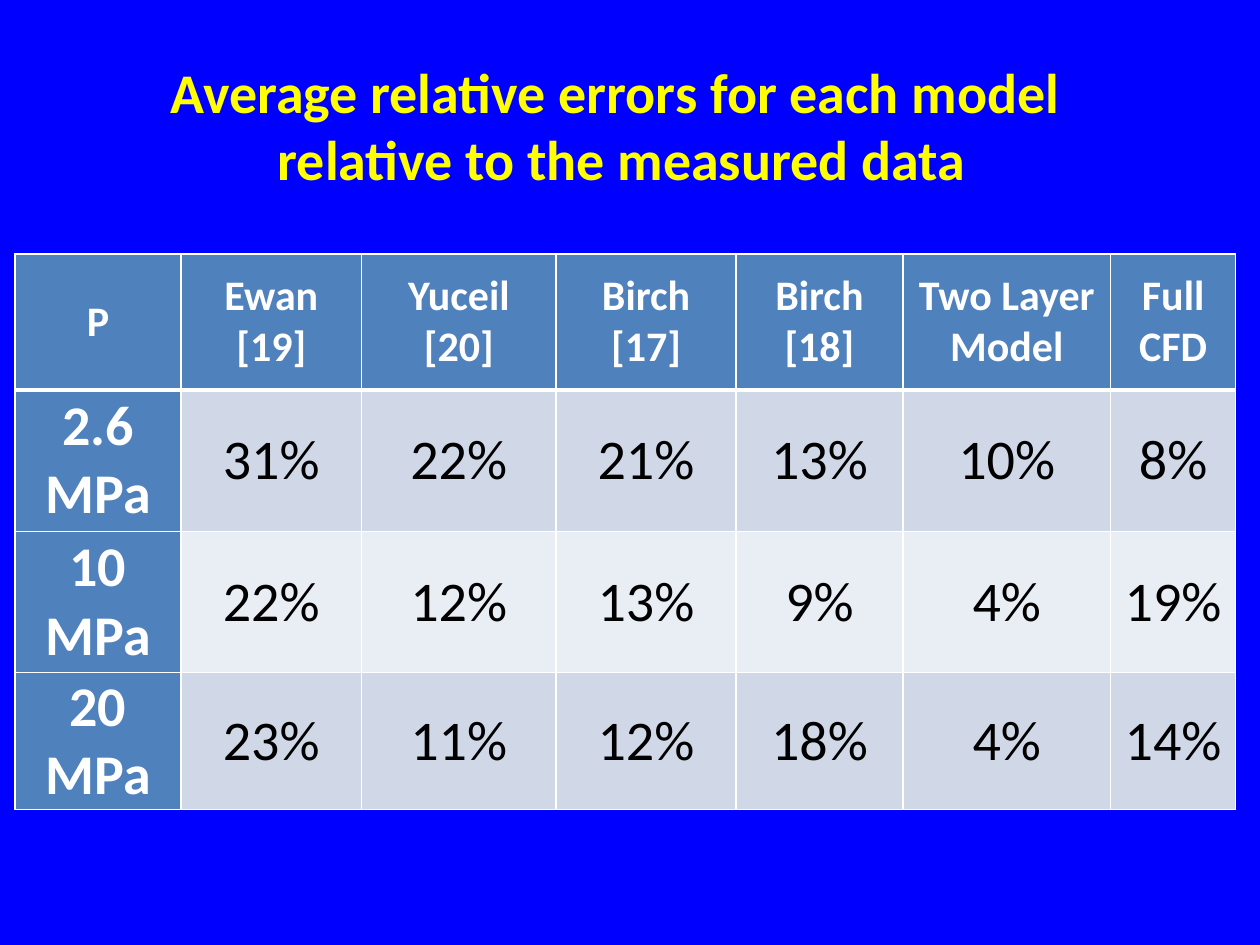
from lxml import etree
from pptx import Presentation
from pptx import util as u
from pptx.dml.color import RGBColor
from pptx.enum import text
from pptx.oxml import ns

WHITE, BLACK, YELLOW = "FFFFFF", "000000", "FFFF00"
BLUE, STEEL = "0000FF", "4F81BD"
BANDS = ["D0D8E8", "E9EDF4"]
WIDTHS = [3.35, 3.64, 3.92, 3.63, 3.36, 4.19, 2.52]
HEIGHTS = [2.74, 2.85, 2.85, 2.76]
TITLE = ["Average relative errors for each model ",
         "relative to the measured data"]
ROWS = [
    ["P", "Ewan [19]", "Yuceil [20]", "Birch [17]", "Birch [18]",
     "Two Layer Model", "Full CFD"],
    ["2.6 MPa", "31%", "22%", "21%", "13%", "10%", "8%"],
    ["10 MPa", "22%", "12%", "13%", "9%", "4%", "19%"],
    ["20 MPa", "23%", "11%", "12%", "18%", "4%", "14%"],
]


def rgb(code):
    return RGBColor.from_string(code)


def paint(obj, code):
    obj.fill.solid()
    obj.fill.fore_color.rgb = rgb(code)


def assign(obj, form):
    for key, val in form.items():
        setattr(obj, key, val)


def write(frame, lines, size, color, bold):
    """Fill a text frame with centred paragraphs."""
    form = {"name": "Calibri", "size": u.Pt(size), "bold": bold}
    for num, line in enumerate(lines):
        para = frame.add_paragraph() if num else frame.paragraphs[0]
        para.alignment = text.PP_ALIGN.CENTER
        run = para.add_run()
        run.text = line
        assign(run.font, form)
        run.font.color.rgb = rgb(color)


def edge(cell, top, base):
    """Draw white cell borders, with top and base widths in points."""
    props = cell._tc.get_or_add_tcPr()
    for side, width in {"L": 1, "R": 1, "T": top, "B": base}.items():
        line = etree.SubElement(props, ns.qn("a:ln" + side), w=str(u.Pt(width)))
        fill = etree.SubElement(line, ns.qn("a:solidFill"))
        etree.SubElement(fill, ns.qn("a:srgbClr"), val=WHITE)


def add_title(slide):
    box = slide.shapes.add_textbox(u.Cm(3.1), u.Cm(1.02), u.Cm(18.87), u.Cm(3))
    frame = box.text_frame
    assign(frame, {"word_wrap": False,
                   "auto_size": text.MSO_AUTO_SIZE.SHAPE_TO_FIT_TEXT,
                   "vertical_anchor": text.MSO_ANCHOR.MIDDLE})
    write(frame, TITLE, 32, YELLOW, True)


def add_grid(slide):
    grid = slide.shapes.add_table(
        len(ROWS), len(WIDTHS), u.Cm(0.3), u.Cm(5.12),
        u.Cm(sum(WIDTHS)), u.Cm(sum(HEIGHTS))).table
    for col, width in zip(grid.columns, WIDTHS):
        col.width = u.Cm(width)
    for row, height in zip(grid.rows, HEIGHTS):
        row.height = u.Cm(height)
    form = {"margin_left": u.Cm(0.18), "margin_right": u.Cm(0.18),
            "margin_top": 0, "margin_bottom": 0,
            "vertical_anchor": text.MSO_ANCHOR.MIDDLE}
    for r, row in enumerate(ROWS):
        for c, word in enumerate(row):
            cell = grid.cell(r, c)
            head = r == 0 or c == 0
            assign(cell, form)
            edge(cell, 3 if r == 1 else 1, 3 if r == 0 else 1)
            paint(cell, STEEL if head else BANDS[(r - 1) % 2])
            write(cell.text_frame, [word], 32 if r else 24,
                  WHITE if head else BLACK, head)


def main():
    deck = Presentation()
    deck.slide_width, deck.slide_height = u.Cm(25.4), u.Cm(19.05)
    slide = deck.slides.add_slide(deck.slide_layouts[6])
    paint(slide.background, BLUE)
    add_grid(slide)
    add_title(slide)
    deck.save("out.pptx")


if __name__ == "__main__":
    main()
